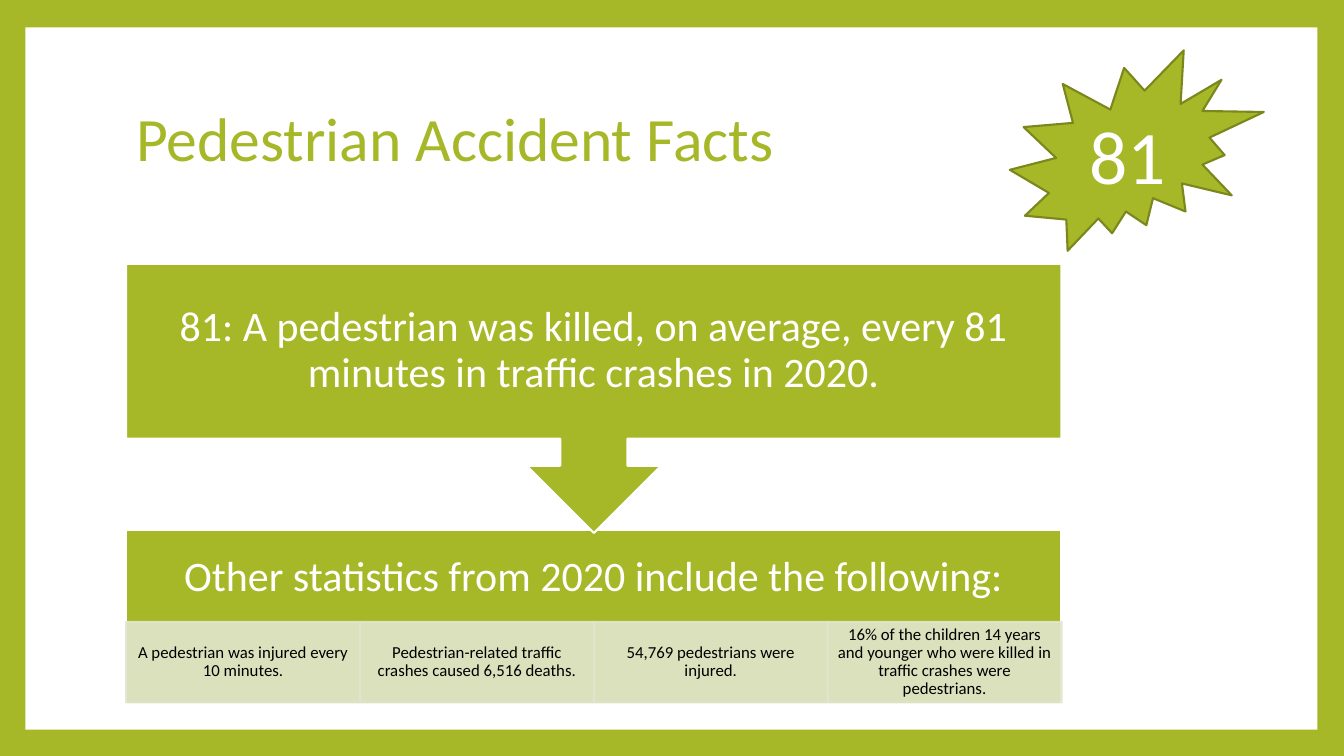
from lxml.etree import SubElement
from pptx import Presentation
from pptx.dml.color import RGBColor
from pptx.enum.shapes import MSO_SHAPE
from pptx.enum.text import MSO_ANCHOR, PP_ALIGN
from pptx.oxml.ns import qn
from pptx.util import Cm, Pt

COLORS = {"green": "A6B727", "olive": "7B871D", "pale": "E1E6CD",
          "white": "FFFFFF", "black": "000000"}
FACTS = [
    "A pedestrian was injured every 10 minutes.",
    "Pedestrian-related traffic crashes caused 6,516 deaths.",
    "54,769 pedestrians were injured.",
    "16% of the children 14 years and younger who were killed in "
    "traffic crashes were pedestrians.",
]
LEFT, WIDTH = 3.18, 23.57


def tint(name):
    """Return the named colour."""
    return RGBColor.from_string(COLORS[name])


def apply(target, values):
    """Set each attribute in values on the target."""
    for key, value in values.items():
        setattr(target, key, value)


def fade(fill, percent):
    """Make a solid fill or line colour partly clear."""
    color = fill._xPr.find(qn("a:solidFill"))[0]
    SubElement(color, qn("a:alpha")).set("val", str(percent * 1000))


def write(shape, text, size, color, align=PP_ALIGN.CENTER, pad=(0.25, 0.13), lines=0.9):
    """Put one formatted paragraph in a shape."""
    frame = shape.text_frame
    across, down = map(Cm, pad)
    apply(frame, {"word_wrap": True, "vertical_anchor": MSO_ANCHOR.MIDDLE,
                  "margin_left": across, "margin_right": across,
                  "margin_top": down, "margin_bottom": down})
    para = frame.paragraphs[0]
    apply(para, {"text": text, "alignment": align, "line_spacing": lines})
    apply(para.font, {"name": "Calibri", "size": Pt(size)})
    para.font.color.rgb = tint(color)


def label(slide, box, *args, **style):
    """Add a text box."""
    write(slide.shapes.add_textbox(*map(Cm, box)), *args, **style)


def block(slide, kind, box, fill, line=None, solid=100):
    """Add a filled shape with an optional outline."""
    shape = slide.shapes.add_shape(kind, *map(Cm, box))
    shape.shadow.inherit = False
    shape.fill.solid()
    shape.fill.fore_color.rgb = tint(fill)
    if line:
        shape.line.color.rgb = tint(line)
        shape.line.width = Pt(1.5)
    else:
        shape.line.fill.background()
    if solid < 100:
        fade(shape.fill, solid)
        fade(shape.line.fill, solid)
    return shape


def frame(slide):
    """Draw the green border and the title."""
    slide.background.fill.solid()
    slide.background.fill.fore_color.rgb = tint("green")
    block(slide, MSO_SHAPE.RECTANGLE, (0.64, 0.69, 32.56, 17.7), "white")
    label(slide, (LEFT, 1.7, 27.43, 3.76), "Pedestrian Accident Facts", 44,
          "green", align=PP_ALIGN.LEFT)


def stats(slide):
    """Draw the lower panel with its row of facts."""
    block(slide, MSO_SHAPE.RECTANGLE, (LEFT, 13.36, WIDTH, 4.39), "green", "white")
    label(slide, (LEFT, 13.36, WIDTH, 2.39),
          "Other statistics from 2020 include the following:", 30, "white",
          pad=(0.58, 0.58))
    step = WIDTH / len(FACTS)
    for i, fact in enumerate(FACTS):
        cell = block(slide, MSO_SHAPE.RECTANGLE, (LEFT + i * step, 15.67, step, 2.03),
                     "pale", "pale", 90)
        write(cell, fact, 12, "black", pad=(0.23, 0.05))


def lead(slide):
    """Draw the main fact with its arrow pointing down."""
    arrow = block(slide, MSO_SHAPE.UP_ARROW_CALLOUT, (LEFT, 6.65, WIDTH, 6.78),
                  "green", "white")
    arrow.rotation = 180
    label(slide, (LEFT, 6.65, WIDTH, 4.39),
          "81: A pedestrian was killed, on average, every 81 minutes in "
          "traffic crashes in 2020.", 30, "white", pad=(0.58, 0.58))


def main():
    """Build and save the slide."""
    deck = Presentation()
    apply(deck, {"slide_width": Cm(33.87), "slide_height": Cm(19.05)})
    slide = deck.slides.add_slide(deck.slide_layouts[6])
    frame(slide)
    stats(slide)
    lead(slide)
    burst = block(slide, MSO_SHAPE.EXPLOSION2, (25.45, 1.27, 6.4, 5.05), "green", "olive")
    write(burst, "81", 54, "white", lines=1.0)
    deck.save("out.pptx")


if __name__ == "__main__":
    main()
